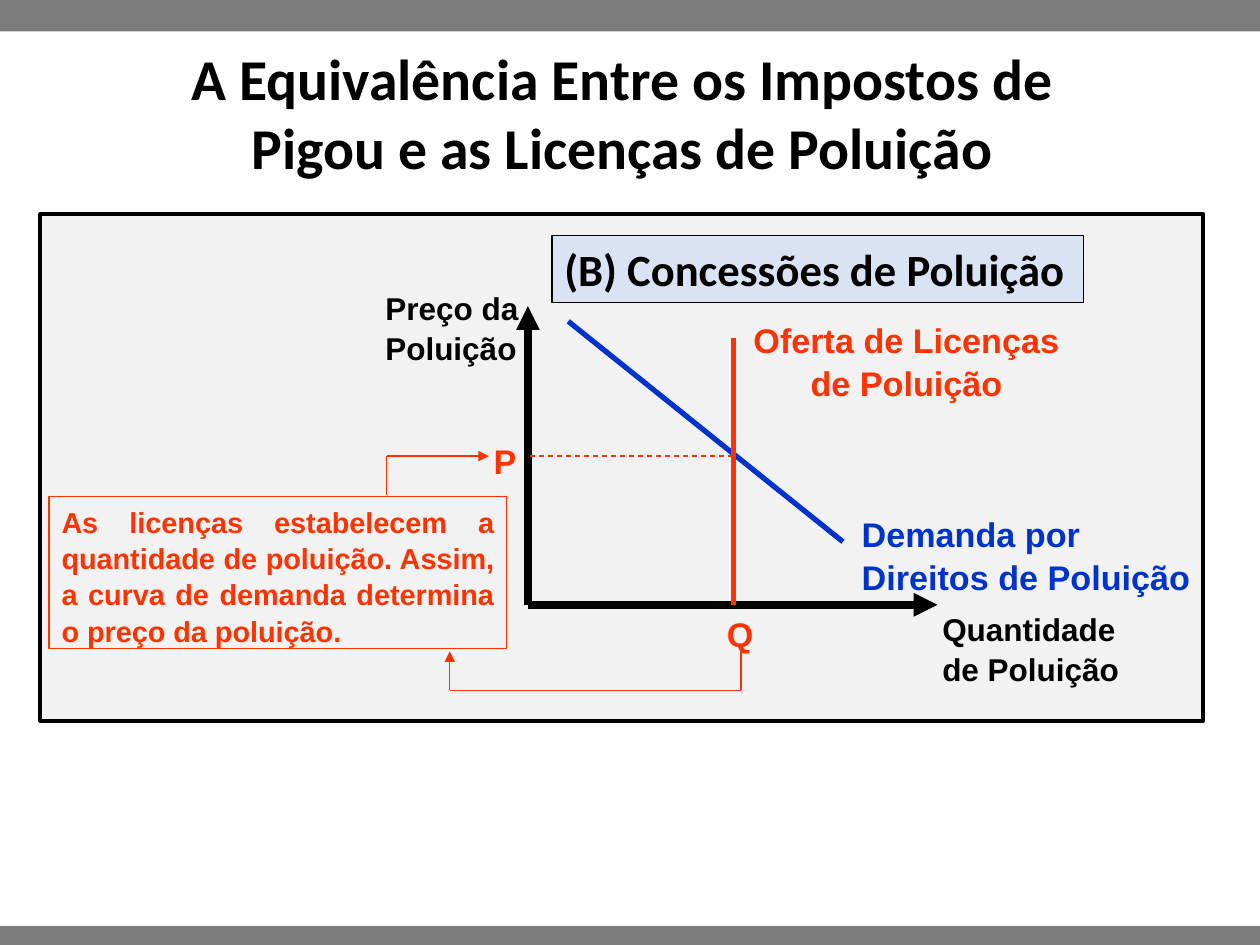
import pptx
import pptx.dml.color
import pptx.enum.dml
import pptx.enum.shapes
import pptx.enum.text
import pptx.oxml
import pptx.oxml.ns
import pptx.util

ALIGN = pptx.enum.text.PP_ALIGN
BLACK, BLUE, RED, GRAY = "000000", "0033CC", "FF3300", "7C7C7C"
WIDTH, HEIGHT = pptx.util.Inches(10), pptx.util.Inches(7.5)

# Positions are percentages of the slide's width and height.
ORIGIN_X, ORIGIN_Y = 41.9, 64
SUPPLY_X, PRICE_Y = 58.2, 48.27
NOTE_ARROW_X, NOTE_RETURN_X, QUANTITY_X = 30.7, 35.7, 58.8
RETURN_TOP, RETURN_BOTTOM = 68.93, 73.07


def across(share):
    return round(WIDTH * share / 100)


def down(share):
    return round(HEIGHT * share / 100)


def area(left, top, width, height):
    return across(left), down(top), across(width), down(height)


def color(value):
    return pptx.dml.color.RGBColor.from_string(value)


def write(shape, text, size, ink, font="Arial", align=ALIGN.LEFT):
    frame = shape.text_frame
    frame.text = text
    frame.word_wrap = True
    frame.auto_size = pptx.enum.text.MSO_AUTO_SIZE.NONE
    frame.vertical_anchor = pptx.enum.text.MSO_ANCHOR.TOP
    para = frame.paragraphs[0]
    para.alignment = align
    if font == "Arial":
        para.line_spacing = 1.05
    if align == ALIGN.LEFT:
        frame.margin_right = pptx.util.Inches(0.05)
    span = para.runs[0].font
    span.name, span.size, span.bold = font, pptx.util.Pt(size), True
    span.color.rgb = color(ink)


def add_label(page, place, text, size, ink, align=ALIGN.LEFT):
    write(page.shapes.add_textbox(*area(*place)), text, size, ink, align=align)


def add_box(page, place, fill=None, outline=None, weight=0.75):
    box = page.shapes.add_shape(
        pptx.enum.shapes.MSO_SHAPE.RECTANGLE, *area(*place))
    box.shadow.inherit = False
    if fill:
        box.fill.solid()
        box.fill.fore_color.rgb = color(fill)
    else:
        box.fill.background()
    if outline:
        box.line.color.rgb = color(outline)
        box.line.width = pptx.util.Pt(weight)
    else:
        box.line.fill.background()
    return box


def add_line(page, start, end, ink, weight, arrow=False, dashed=False):
    line = page.shapes.add_connector(
        pptx.enum.shapes.MSO_CONNECTOR.STRAIGHT,
        across(start[0]), down(start[1]), across(end[0]), down(end[1]))
    line.line.color.rgb = color(ink)
    line.line.width = pptx.util.Pt(weight)
    if dashed:
        line.line.dash_style = pptx.enum.dml.MSO_LINE.DASH
    if arrow:
        tip = pptx.oxml.parse_xml(
            '<a:tailEnd %s type="triangle"/>' % pptx.oxml.ns.nsdecls("a"))
        line.line._get_or_add_ln().append(tip)
    line._element.spPr.append(pptx.oxml.parse_xml(
        "<a:effectLst %s/>" % pptx.oxml.ns.nsdecls("a")))


def add_path(page, points, ink, weight):
    """Join the points with straight lines and put an arrowhead on the last."""
    for index in range(len(points) - 1):
        add_line(page, points[index], points[index + 1], ink, weight,
                 arrow=index == len(points) - 2)


def add_title(page):
    title = page.shapes.title
    title.left, title.top, title.width, title.height = area(
        12.8, 3.87, 73.2, 16.13)
    write(title, "A Equivalência Entre os Impostos de Pigou e as Licenças de Poluição",
          33, BLACK, "Calibri", ALIGN.CENTER)


def add_axes(page):
    origin = (ORIGIN_X, ORIGIN_Y)
    for end in ((ORIGIN_X, 32.4), (74.4, ORIGIN_Y)):
        add_line(page, origin, end, BLACK, 4.5, arrow=True)
    add_label(page, (29.6, 29.73, 13.5, 9.47), "Preço da Poluição", 18, BLACK)
    add_label(page, (73.8, 63.73, 17.1, 9.47), "Quantidade de Poluição", 18, BLACK)


def add_curves(page):
    add_line(page, (45.1, 34), (66.9, 57.33), BLUE, 3)
    add_label(page, (67.4, 53.47, 28.1, 10.13),
              "Demanda por Direitos de Poluição", 19.5, BLUE)
    add_label(page, (57.9, 32.93, 28.1, 10.13),
              "Oferta de Licenças de Poluição", 19.5, RED, ALIGN.CENTER)
    add_line(page, (SUPPLY_X, 35.73), (SUPPLY_X, ORIGIN_Y), RED, 3)
    add_label(page, (56.7, ORIGIN_Y, 3.1, 5.73), "Q", 19.5, RED)


def add_price_note(page):
    add_label(page, (38.2, 45.73, 3.1, 5.73), "P", 19.5, RED)
    note = add_box(page, (3.9, 52.53, 36.3, 16.13), outline=RED)
    write(note, "As licenças estabelecem a quantidade de poluição. Assim, "
          "a curva de demanda determina o preço da poluição.",
          16.5, RED, align=ALIGN.JUSTIFY)
    add_path(page, [(NOTE_ARROW_X, 52.4), (NOTE_ARROW_X, PRICE_Y),
                    (38.8, PRICE_Y)], RED, 0.75)
    add_path(page, [(QUANTITY_X, RETURN_TOP), (QUANTITY_X, RETURN_BOTTOM),
                    (NOTE_RETURN_X, RETURN_BOTTOM),
                    (NOTE_RETURN_X, RETURN_TOP)], RED, 0.75)
    add_line(page, (SUPPLY_X, PRICE_Y), (ORIGIN_X, PRICE_Y), RED, 0.75,
             dashed=True)


def main():
    deck = pptx.Presentation()
    deck.slide_width, deck.slide_height = WIDTH, HEIGHT
    page = deck.slides.add_slide(deck.slide_layouts.get_by_name("Title Only"))
    add_box(page, (0, 98, 100, 2), GRAY)
    add_box(page, (0, 0, 100, 3.33), GRAY)
    add_box(page, (3.2, 22.67, 92.3, 53.6), "F2F2F2", BLACK, 2.25)
    add_axes(page)
    add_curves(page)
    heading = add_box(page, (43.8, 24.93, 42.2, 7.07), "DAE3F3", BLACK)
    write(heading, "(B) Concessões de Poluição", 25.5, BLACK, "Calibri")
    add_price_note(page)
    add_title(page)
    deck.save("out.pptx")


if __name__ == "__main__":
    main()
